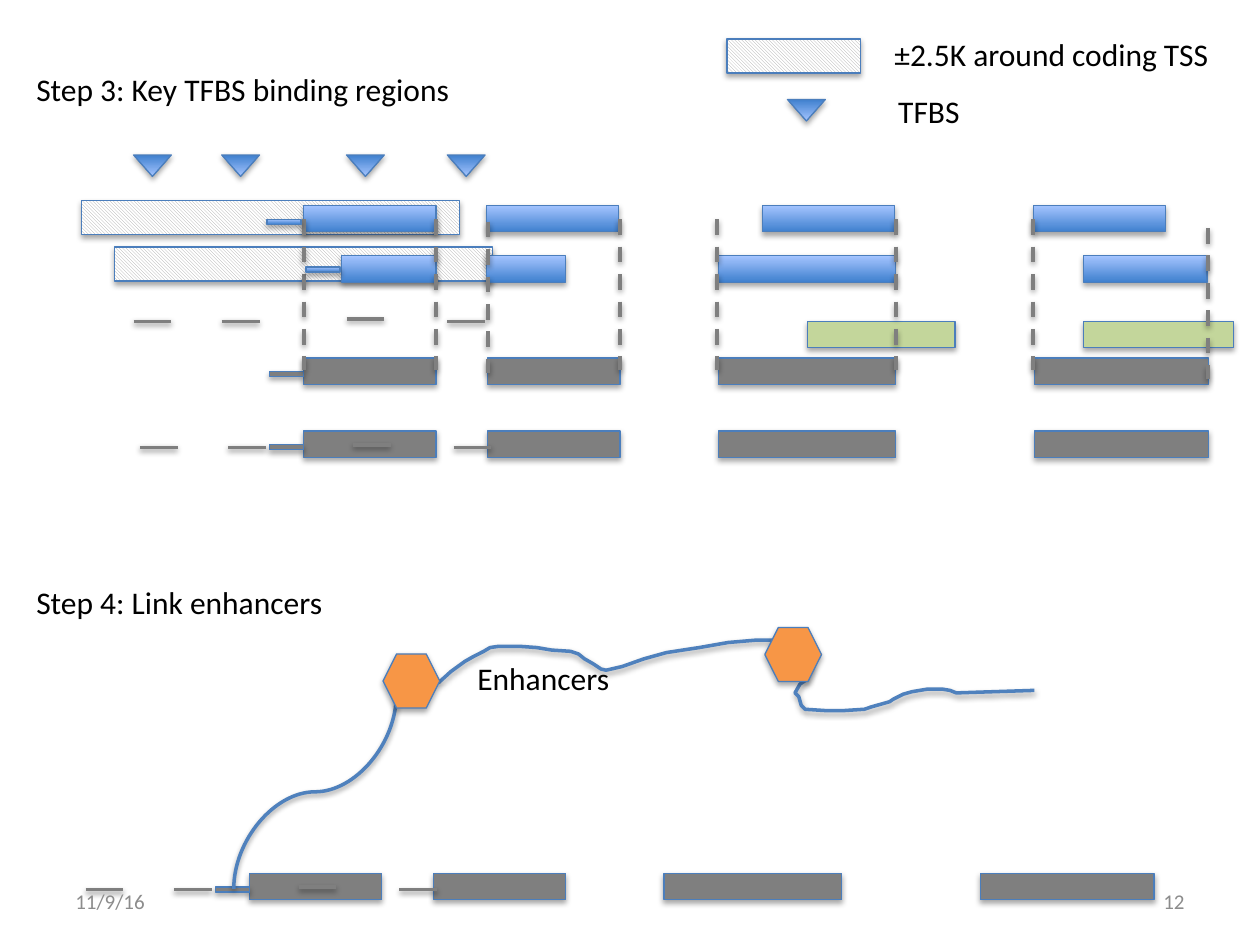
"""Build a slide on binding regions and linked enhancers."""
from lxml.etree import SubElement
from pptx import Presentation
from pptx.dml.color import RGBColor
from pptx.enum.dml import MSO_LINE, MSO_PATTERN
from pptx.enum.shapes import MSO_CONNECTOR, MSO_SHAPE
from pptx.enum.text import MSO_ANCHOR, MSO_AUTO_SIZE, PP_ALIGN
from pptx.oxml.ns import qn
from pptx.util import Inches, Pt

BLUE, GRAY, GREEN, ORANGE = "3F80CE", "7F7F7F", "C3D69B", "F79646"
LIGHT, EDGE, CURVE, HATCH = "A4C4FF", "4B7EBC", "4F81BD", "A6A6A6"
BAR, THIN, STUB, TICK, EXON = 0.21, 0.04, 0.27, 0.3, 1.05

LABELS = [
    ("Step 3: Key TFBS binding regions", 0.19, 0.51, 3.53),
    ("Enhancers", 3.69, 5.18, 1.27),
    ("Step 4: Link enhancers", 0.19, 4.58, 2.5),
    ("±2.5K around coding TSS", 7, 0.23, 2.73),
    ("TFBS", 7.03, 0.68, 0.69),
]
FOOTER = [("11/9/16", 0.5, PP_ALIGN.LEFT), ("12", 7.17, PP_ALIGN.RIGHT)]
WINDOWS = [(0.91, 1.96, 3), (0.65, 1.59, 3), (5.77, 0.31, 1.06)]
ROWS = [
    (1.63, BLUE, [(2.41, EXON), (3.86, EXON), (6.05, EXON), (8.2, EXON)]),
    (2.03, BLUE, [(2.71, 0.75), (3.86, 0.63), (5.7, 1.41), (8.6, 0.98)]),
    (2.55, GREEN, [(6.41, 1.17), (8.6, 1.19)]),
]
MERGED = [(2.41, EXON), (3.87, EXON), (5.7, 1.41), (8.21, 1.38)]
GUIDES = [(2.41, 1.74), (3.46, 1.74), (3.87, 1.76), (4.92, 1.74),
          (5.69, 1.74), (7.11, 1.74), (8.2, 1.74), (9.59, 1.81)]
STUBS = [(2.12, 1.74), (2.43, 2.12)]
SITES = [(1.06, 0), (1.76, 0), (2.75, -0.02), (3.55, 0)]
STRAND = [
    (3.48, 5.42), (3.58, 5.33), (3.69, 5.25), (3.76, 5.21), (3.84, 5.17),
    (3.89, 5.14), (3.96, 5.13), (4.12, 5.13), (4.26, 5.14), (4.38, 5.16),
    (4.53, 5.17), (4.59, 5.19), (4.64, 5.23), (4.71, 5.27), (4.77, 5.31),
    (4.81, 5.32), (4.94, 5.29), (5.11, 5.23), (5.29, 5.18), (5.55, 5.14),
    (5.78, 5.1), (6.01, 5.08), (6.13, 5.08), (6.22, 5.1), (6.29, 5.17),
    (6.41, 5.2), (6.44, 5.29), (6.41, 5.39), (6.35, 5.43), (6.31, 5.5),
    (6.34, 5.53), (6.36, 5.6), (6.39, 5.63), (6.55, 5.64), (6.7, 5.64),
    (6.86, 5.63), (6.92, 5.61), (6.99, 5.59), (7.06, 5.57), (7.09, 5.55),
    (7.17, 5.51), (7.24, 5.49), (7.36, 5.47), (7.48, 5.47), (7.54, 5.48),
    (7.59, 5.5), (8.21, 5.48),
]
HEXES = [(3.04, 5.19), (6.07, 4.98)]

deck = Presentation()
deck.slide_width, deck.slide_height = Inches(10), Inches(7.5)
slide = deck.slides.add_slide(deck.slide_layouts[6])
shapes = slide.shapes


def paint(color, value):
    """Set a colour from a hex string."""
    color.rgb = RGBColor.from_string(value)


def shade(item, dist, alpha):
    """Give an item a soft shadow straight below it."""
    props = item._element.spPr
    for old in props.findall(qn("a:effectLst")):
        props.remove(old)
    effects = SubElement(props, qn("a:effectLst"))
    shadow = SubElement(effects, qn("a:outerShdw"), blurRad="40000", dist=str(dist),
                        dir="5400000", rotWithShape="0")
    color = SubElement(shadow, qn("a:srgbClr"), val="000000")
    SubElement(color, qn("a:alpha"), val=str(alpha * 1000))


def stroke(item, color, width):
    """Style and shade a line."""
    paint(item.line.color, color)
    item.line.width = Pt(width)
    shade(item, 20000, 38)


def block(x, y, w, h, color, kind=MSO_SHAPE.RECTANGLE):
    """Add a filled, outlined and shaded shape."""
    item = shapes.add_shape(kind, *map(Inches, (x, y, w, h)))
    fill = item.fill
    if color == BLUE:
        fill.gradient()
        fill.gradient_angle = 90
        for stop, value in zip(fill.gradient_stops, (BLUE, LIGHT)):
            paint(stop.color, value)
    elif color == HATCH:
        fill.patterned()
        fill.pattern = MSO_PATTERN.LIGHT_DOWNWARD_DIAGONAL
        paint(fill.fore_color, HATCH)
        paint(fill.back_color, "FFFFFF")
    else:
        fill.solid()
        paint(fill.fore_color, color)
    paint(item.line.color, EDGE)
    item.line.width = Pt(0.75)
    shade(item, 23000, 35)
    return item


def link(x, y, end, bottom, color, width, kind=MSO_CONNECTOR.STRAIGHT):
    """Add a shaded connector."""
    item = shapes.add_connector(kind, *map(Inches, (x, y, end, bottom)))
    stroke(item, color, width)
    return item


def site(x, y):
    """Add a triangle that points down."""
    block(x, y, TICK, 0.17, BLUE, MSO_SHAPE.ISOSCELES_TRIANGLE).rotation = 180


def ticks(shift, y):
    """Mark the binding sites with short lines."""
    for x, rise in SITES:
        link(x + shift, y + rise, x + shift + TICK, y + rise, GRAY, 2)


def merge(shift, y):
    """Add one row of merged exons with its leading stub."""
    for x, w in MERGED:
        block(x + shift, y, w, BAR, GRAY)
    block(2.14 + shift, y + 0.11, STUB, THIN, GRAY)


def label(text, x, y, w, size=18, color="000000"):
    """Add a line of text and return its frame."""
    frame = shapes.add_textbox(*map(Inches, (x, y, w, 0.4))).text_frame
    frame.text = text
    frame.word_wrap = False
    font = frame.paragraphs[0].runs[0].font
    font.name, font.size = "Calibri", Pt(size)
    paint(font.color, color)
    return frame


for x, y, w in WINDOWS:
    block(x, y, w, 0.27, HATCH)
for y, color, spans in ROWS:
    for x, w in spans:
        block(x, y, w, BAR, color)
merge(0, 2.84)
for x, y in GUIDES:
    link(x, y, x, y + 1.2, GRAY, 2.25).line.dash_style = MSO_LINE.DASH
for x, y in STUBS:
    block(x, y, STUB, THIN, BLUE)
for x, rise in SITES:
    site(x, 1.23)
site(6.25, 0.79)
ticks(0, 2.55)
for shift, y in [(0, 3.42), (-0.43, 6.93)]:
    merge(shift, y)
    ticks(shift + 0.05, y + 0.13)

loop = link(3.27, 6.93, 1.73, 5.64, CURVE, 2, MSO_CONNECTOR.CURVE)
loop._element.spPr.xfrm.set("rot", "5400000")
points = [(Inches(x), Inches(y)) for x, y in STRAND]
pen = shapes.build_freeform(*points[0])
pen.add_line_segments(points[1:], close=False)
strand = pen.convert_to_shape()
strand.fill.background()
stroke(strand, CURVE, 2)
for x, y in HEXES:
    block(x, y, 0.45, 0.43, ORANGE, MSO_SHAPE.HEXAGON)

for text, x, y, w in LABELS:
    label(text, x, y, w).auto_size = MSO_AUTO_SIZE.SHAPE_TO_FIT_TEXT
for text, x, side in FOOTER:
    frame = label(text, x, 6.95, 2.33, 12, "8C8C8C")
    frame.word_wrap = True
    frame.vertical_anchor = MSO_ANCHOR.MIDDLE
    frame.paragraphs[0].alignment = side

deck.save("out.pptx")
